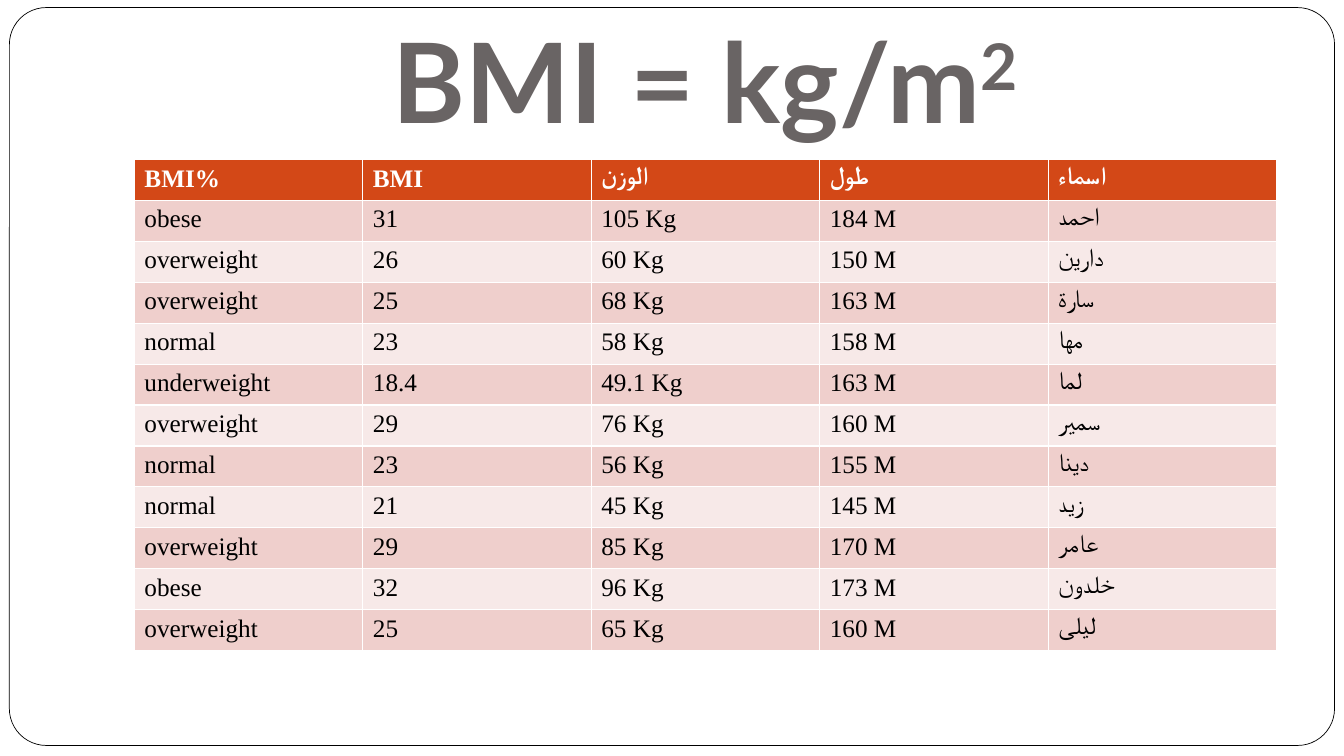
import dataclasses
import typing

import pptx
import pptx.dml.color
import pptx.enum.shapes
import pptx.enum.text
import pptx.util

WIDTH = pptx.util.Inches(13.33)
HEIGHT = pptx.util.Inches(7.5)
HEADER_FILL = "D34817"
BAND_FILLS = ("EFCFCC", "F7E9E8")


@dataclasses.dataclass(frozen=True)
class Area:
    """Position and size in percent of the slide."""

    left: float
    top: float
    width: float
    height: float

    def box(self) -> tuple[int, int, int, int]:
        return (
            round(WIDTH * self.left / 100),
            round(HEIGHT * self.top / 100),
            round(WIDTH * self.width / 100),
            round(HEIGHT * self.height / 100),
        )


class Person(typing.NamedTuple):
    category: str
    bmi: str
    weight: str
    height: str
    name: str


FRAME = Area(0.7, 1, 98.6, 97.6)
TITLE = Area(10, 4, 85, 16.67)
TABLE = Area(10, 21.1, 85, 65)

HEADER = Person("BMI%", "BMI", "الوزن", "طول", "اسماء")
PEOPLE = (
    Person("obese", "31", "105 Kg", "184 M", "احمد"),
    Person("overweight", "26", "60 Kg", "150 M", "دارين"),
    Person("overweight", "25", "68 Kg", "163 M", "سارة"),
    Person("normal", "23", "58 Kg", "158 M", "مها"),
    Person("underweight", "18.4", "49.1 Kg", "163 M", "لما"),
    Person("overweight", "29", "76 Kg", "160 M", "سمير"),
    Person("normal", "23", "56 Kg", "155 M", "دينا"),
    Person("normal", "21", "45 Kg", "145 M", "زيد"),
    Person("overweight", "29", "85 Kg", "170 M", "عامر"),
    Person("obese", "32", "96 Kg", "173 M", "خلدون"),
    Person("overweight", "25", "65 Kg", "160 M", "ليلى"),
)


def rgb(color: str) -> pptx.dml.color.RGBColor:
    return pptx.dml.color.RGBColor.from_string(color)


def add_run(p, text: str, font: str, size: float, color: str, bold: bool):
    r = p.add_run()
    r.text = text
    r.font.name = font
    r.font.size = pptx.util.Pt(size)
    r.font.bold = bold
    r.font.color.rgb = rgb(color)
    return r


def draw_frame(s) -> None:
    left, top, width, height = FRAME.box()
    sp = s.shapes.add_shape(
        pptx.enum.shapes.MSO_SHAPE.ROUNDED_RECTANGLE, left, top, width, height
    )
    sp.adjustments[0] = 0.05
    sp.shadow.inherit = False
    sp.fill.solid()
    sp.fill.fore_color.rgb = rgb("FFFFFF")
    sp.line.color.rgb = rgb("000000")
    sp.line.width = pptx.util.Pt(0.5)
    s.shapes._spTree.insert(2, sp._element)


def draw_title(s) -> None:
    sp = s.shapes.title
    sp.left, sp.top, sp.width, sp.height = TITLE.box()
    tf = sp.text_frame
    tf.word_wrap = True
    tf.auto_size = pptx.enum.text.MSO_AUTO_SIZE.NONE
    tf.vertical_anchor = pptx.enum.text.MSO_ANCHOR.BOTTOM
    tf.margin_bottom = pptx.util.Inches(0.1)
    p = tf.paragraphs[0]
    p.alignment = pptx.enum.text.PP_ALIGN.CENTER
    add_run(p, "BMI = kg/m", "Lato", 79.2, "696464", True)
    exponent = add_run(p, "2", "Lato", 79.2, "696464", True)
    exponent.font._element.set("baseline", "30000")


def draw_table(s) -> None:
    rows = (HEADER, *PEOPLE)
    left, top, width, height = TABLE.box()
    table = s.shapes.add_table(
        len(rows), len(HEADER), left, top, width, height
    ).table
    for i, person in enumerate(rows):
        is_header = i == 0
        fill = HEADER_FILL if is_header else BAND_FILLS[(i - 1) % 2]
        color = "FFFFFF" if is_header else "000000"
        for j, text in enumerate(person):
            cell = table.cell(i, j)
            cell.fill.solid()
            cell.fill.fore_color.rgb = rgb(fill)
            p = cell.text_frame.paragraphs[0]
            add_run(p, text, "Times New Roman", 18, color, is_header)


def main() -> None:
    prs = pptx.Presentation()
    prs.slide_width, prs.slide_height = WIDTH, HEIGHT
    s = prs.slides.add_slide(prs.slide_layouts.get_by_name("Title Only"))
    draw_frame(s)
    draw_title(s)
    draw_table(s)
    prs.save("out.pptx")


if __name__ == "__main__":
    main()
